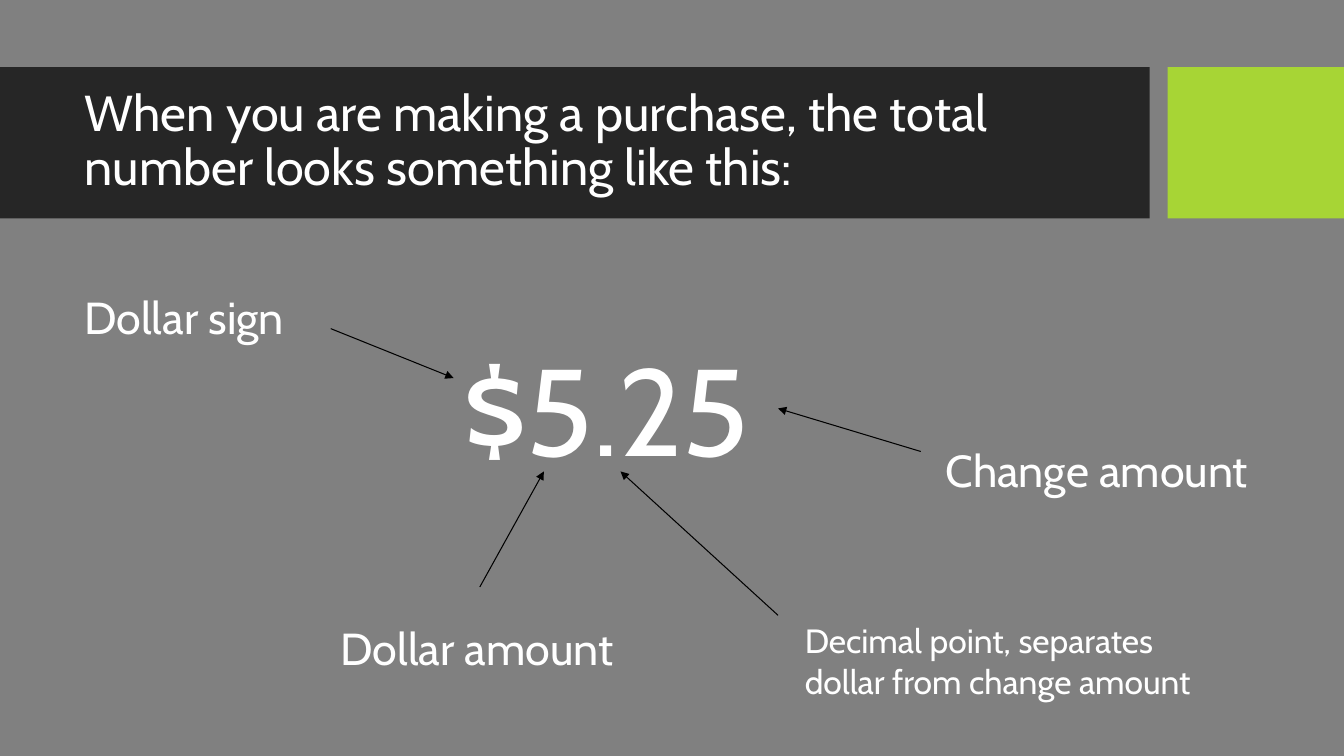
"""Build a slide that names the parts of a price."""
from pptx import Presentation
from pptx.dml.color import RGBColor
from pptx.enum.shapes import MSO_CONNECTOR, MSO_SHAPE
from pptx.enum.text import MSO_ANCHOR as Anchor, MSO_AUTO_SIZE as AutoSize, PP_ALIGN as Align
from pptx.oxml.ns import qn
from pptx.util import Pt
from lxml.etree import SubElement

PX = 9525
GRAY = RGBColor(0x80, 0x80, 0x80)
DARK = RGBColor(0x26, 0x26, 0x26)
GREEN = RGBColor(0xA7, 0xD5, 0x35)
WHITE = RGBColor(0xFF, 0xFF, 0xFF)
BLACK = RGBColor(0, 0, 0)
FONT = "Cabin"

BANDS = [((0, 64, 1095, 144), DARK), ((1112, 64, 168, 144), GREEN)]
LABELS = [
    ("$5.25", (432, 313, 367, 152), 88),
    ("Dollar sign", (71, 271, 223, 61), 32),
    ("Dollar amount", (315, 586, 339, 61), 32),
    ("Change amount", (891, 417, 351, 61), 32),
    ("Decimal point, separates dollar from change amount", (757, 586, 416, 87), 24),
]
ARROWS = [
    (315, 313, 432, 360),
    (457, 559, 518, 449),
    (877, 430, 741, 389),
    (741, 586, 591, 449),
]


def emu(lengths):
    return [length * PX for length in lengths]


def write_text(box, text, size, anchor=Anchor.TOP, fit=AutoSize.SHAPE_TO_FIT_TEXT, spacing=1.0):
    frame = box.text_frame
    frame.word_wrap = True
    frame.auto_size = fit
    frame.vertical_anchor = anchor
    para = frame.paragraphs[0]
    para.alignment = Align.LEFT
    para.line_spacing = spacing
    span = para.add_run()
    span.text = text
    span.font.name = FONT
    span.font.size = Pt(size)
    span.font.color.rgb = WHITE


def add_band(page, place, color):
    band = page.shapes.add_shape(MSO_SHAPE.RECTANGLE, *emu(place))
    band.shadow.inherit = False
    band.fill.solid()
    band.fill.fore_color.rgb = color
    band.line.fill.background()


def add_title(page, text):
    title = page.shapes.title
    title.left, title.top, title.width, title.height = emu((71, 79, 1009, 113))
    write_text(title, text, 36, anchor=Anchor.MIDDLE, fit=AutoSize.NONE, spacing=0.9)
    title.element.getparent().append(title.element)


def add_label(page, text, place, size):
    write_text(page.shapes.add_textbox(*emu(place)), text, size)


def add_arrow(page, ends):
    arrow = page.shapes.add_connector(MSO_CONNECTOR.STRAIGHT, *emu(ends))
    arrow.line.color.rgb = BLACK
    arrow.line.width = Pt(0.75)
    SubElement(arrow.line._get_or_add_ln(), qn("a:tailEnd"), type="triangle")
    SubElement(arrow.element.spPr, qn("a:effectLst"))


def main():
    deck = Presentation()
    deck.slide_width, deck.slide_height = emu((1280, 720))
    page = deck.slides.add_slide(deck.slide_layouts.get_by_name("Title Only"))
    page.background.fill.solid()
    page.background.fill.fore_color.rgb = GRAY
    for place, color in BANDS:
        add_band(page, place, color)
    add_title(page, "When you are making a purchase, the total number looks something like this:")
    for text, place, size in LABELS:
        add_label(page, text, place, size)
    for ends in ARROWS:
        add_arrow(page, ends)
    deck.save("out.pptx")


if __name__ == "__main__":
    main()
